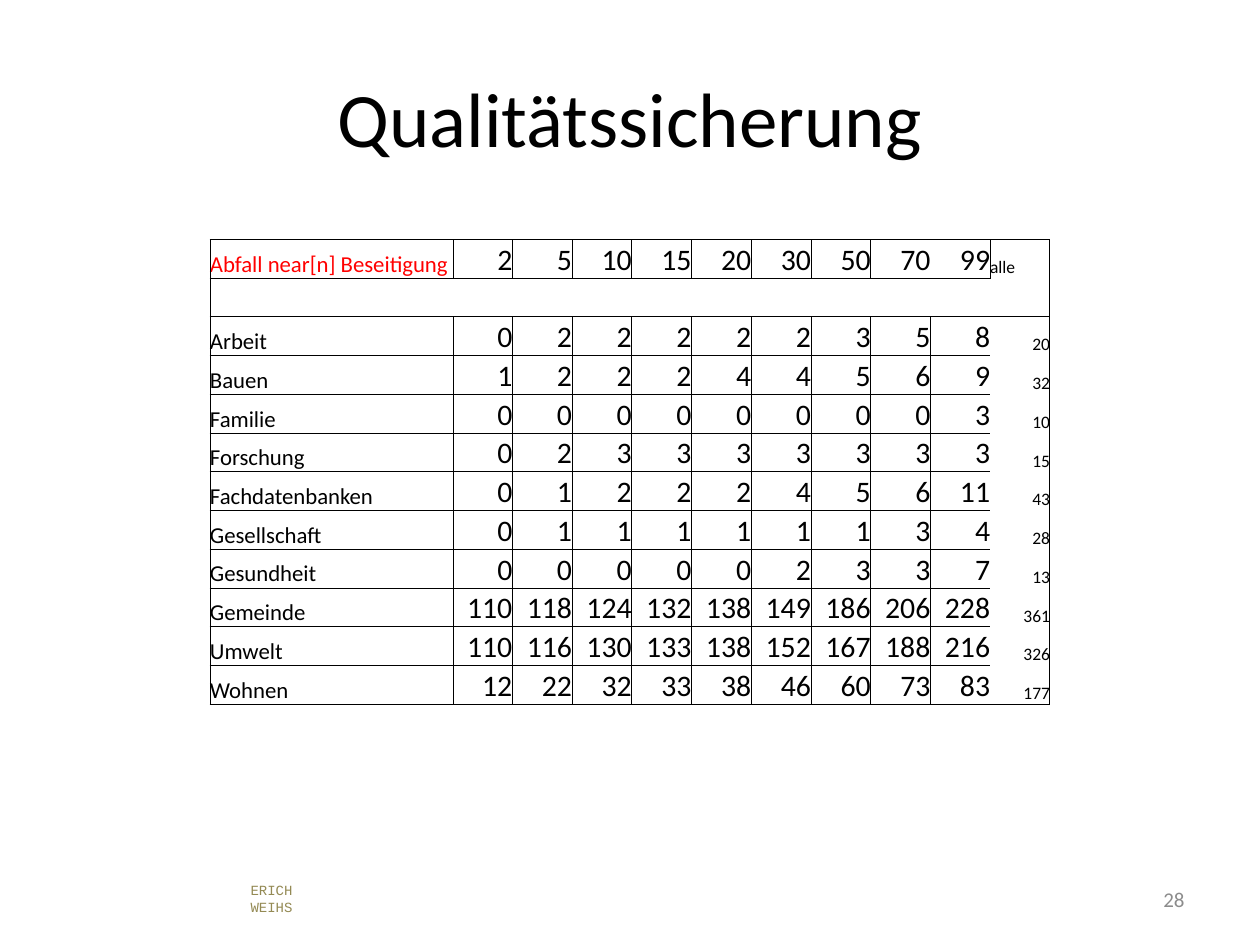
from lxml import etree
from pptx import Presentation
from pptx.dml.color import RGBColor
from pptx.enum.text import MSO_ANCHOR, PP_ALIGN
from pptx.oxml.ns import qn
from pptx.util import Inches, Pt

LEFT, CENTER, RIGHT = PP_ALIGN.LEFT, PP_ALIGN.CENTER, PP_ALIGN.RIGHT
TOP, MIDDLE, BOTTOM = MSO_ANCHOR.TOP, MSO_ANCHOR.MIDDLE, MSO_ANCHOR.BOTTOM
WIDTH, HEIGHT = Inches(10), Inches(7.5)
COLORS = {"text": "000000", "query": "FF0000", "number": "8C8C8C", "author": "948A54"}
SIDES = {"l": "lnL", "r": "lnR", "t": "lnT", "b": "lnB"}
BORDER = Pt(0.5)
LABEL_SIZE, COUNT_SIZE, TOTAL_SIZE = 13, 17, 10
COLUMN_SHARES = [0.29, 0.07] + [0.64 / 9] * 9
FOOTER_TOP = 6.95 / 7.5
ROWS = [
    ["Abfall near[n] Beseitigung", 2, 5, 10, 15, 20, 30, 50, 70, 99, "alle"],
    [""] * 11,
    ["Arbeit", 0, 2, 2, 2, 2, 2, 3, 5, 8, 20],
    ["Bauen", 1, 2, 2, 2, 4, 4, 5, 6, 9, 32],
    ["Familie", 0, 0, 0, 0, 0, 0, 0, 0, 3, 10],
    ["Forschung", 0, 2, 3, 3, 3, 3, 3, 3, 3, 15],
    ["Fachdatenbanken", 0, 1, 2, 2, 2, 4, 5, 6, 11, 43],
    ["Gesellschaft", 0, 1, 1, 1, 1, 1, 1, 3, 4, 28],
    ["Gesundheit", 0, 0, 0, 0, 0, 2, 3, 3, 7, 13],
    ["Gemeinde", 110, 118, 124, 132, 138, 149, 186, 206, 228, 361],
    ["Umwelt", 110, 116, 130, 133, 138, 152, 167, 188, 216, 326],
    ["Wohnen", 12, 22, 32, 33, 38, 46, 60, 73, 83, 177],
]
LAST_ROW, LAST_COLUMN = len(ROWS) - 1, len(COLUMN_SHARES) - 1


def style_paragraph(para, size, color="text", align=LEFT, font="Calibri"):
    """Set alignment and font of one paragraph."""
    para.alignment = align
    para.font.name = font
    para.font.size = Pt(size)
    para.font.color.rgb = RGBColor.from_string(COLORS[color])


def add_text(page, box, text, anchor=MIDDLE, **style):
    """Place a text box given as left, top, width and height shares of the page."""
    left, top, width, height = box
    shape = page.shapes.add_textbox(
        int(left * WIDTH), int(top * HEIGHT), int(width * WIDTH), int(height * HEIGHT))
    frame = shape.text_frame
    frame.word_wrap = True
    frame.vertical_anchor = anchor
    frame.text = text
    for para in frame.paragraphs:
        style_paragraph(para, **style)


def border_sides(row, column):
    """Return the sides of a cell that carry a line."""
    if row == 1:
        return {0: "ltb", LAST_COLUMN: "rb"}.get(column, "tb")
    if column == LAST_COLUMN:
        return {0: "ltr", 2: "tr", LAST_ROW: "rb"}.get(row, "r")
    if row == 0:
        return {8: "ltb", 9: "trb"}.get(column, "ltrb")
    return "ltb" if column == 9 else "ltrb"


def draw_borders(cell, sides):
    """Draw the named sides of a cell and hide the others."""
    properties = cell._tc.get_or_add_tcPr()
    for position, (side, tag) in enumerate(SIDES.items()):
        line = etree.Element(qn(f"a:{tag}"), w=str(BORDER))
        properties.insert(position, line)
        if side in sides:
            fill = etree.SubElement(line, qn("a:solidFill"))
            etree.SubElement(fill, qn("a:srgbClr"), val=COLORS["text"])
        else:
            etree.SubElement(line, qn("a:noFill"))


def fill_cell(cell, row, column, value):
    """Write and style one cell of the hit table."""
    cell.margin_left = cell.margin_right = cell.margin_top = cell.margin_bottom = 0
    cell.vertical_anchor = BOTTOM
    cell.fill.background()
    cell.text = str(value)
    size = {0: LABEL_SIZE, LAST_COLUMN: TOTAL_SIZE}.get(column, COUNT_SIZE)
    color = "query" if row == column == 0 else "text"
    align = LEFT if isinstance(value, str) else RIGHT
    style_paragraph(cell.text_frame.paragraphs[0], size, color, align)
    draw_borders(cell, border_sides(row, column))


def add_hit_table(page, box):
    """Place the table of hits per topic and word distance."""
    left, top, width, height = box
    frame = page.shapes.add_table(
        len(ROWS), len(COLUMN_SHARES), int(left * WIDTH), int(top * HEIGHT),
        int(width * WIDTH), int(height * HEIGHT))
    table = frame.table
    table.first_row = table.horz_banding = False
    for column, share in zip(table.columns, COLUMN_SHARES):
        column.width = int(share * width * WIDTH)
    for row, values in enumerate(ROWS):
        for column, value in enumerate(values):
            fill_cell(table.cell(row, column), row, column, value)


def build_page(deck):
    """Add the quality assurance page to the deck."""
    page = deck.slides.add_slide(deck.slide_layouts[6])
    add_text(page, (1.89 / 10, FOOTER_TOP, 0.06, 0.05), "ERICH\nWEIHS", anchor=TOP,
             size=8, color="author", font="Courier New")
    add_text(page, (0.05, 0.04, 0.9, 1 / 6), "Qualitätssicherung", size=44, align=CENTER)
    add_text(page, (0.72, FOOTER_TOP, 0.23, 0.05), "28", size=12, color="number", align=RIGHT)
    add_hit_table(page, (1 / 6, 1.9 / 7.5, 2 / 3, 3.69 / 7.5))


def main():
    """Build and save the deck."""
    deck = Presentation()
    deck.slide_width, deck.slide_height = WIDTH, HEIGHT
    build_page(deck)
    deck.save("out.pptx")


if __name__ == "__main__":
    main()
